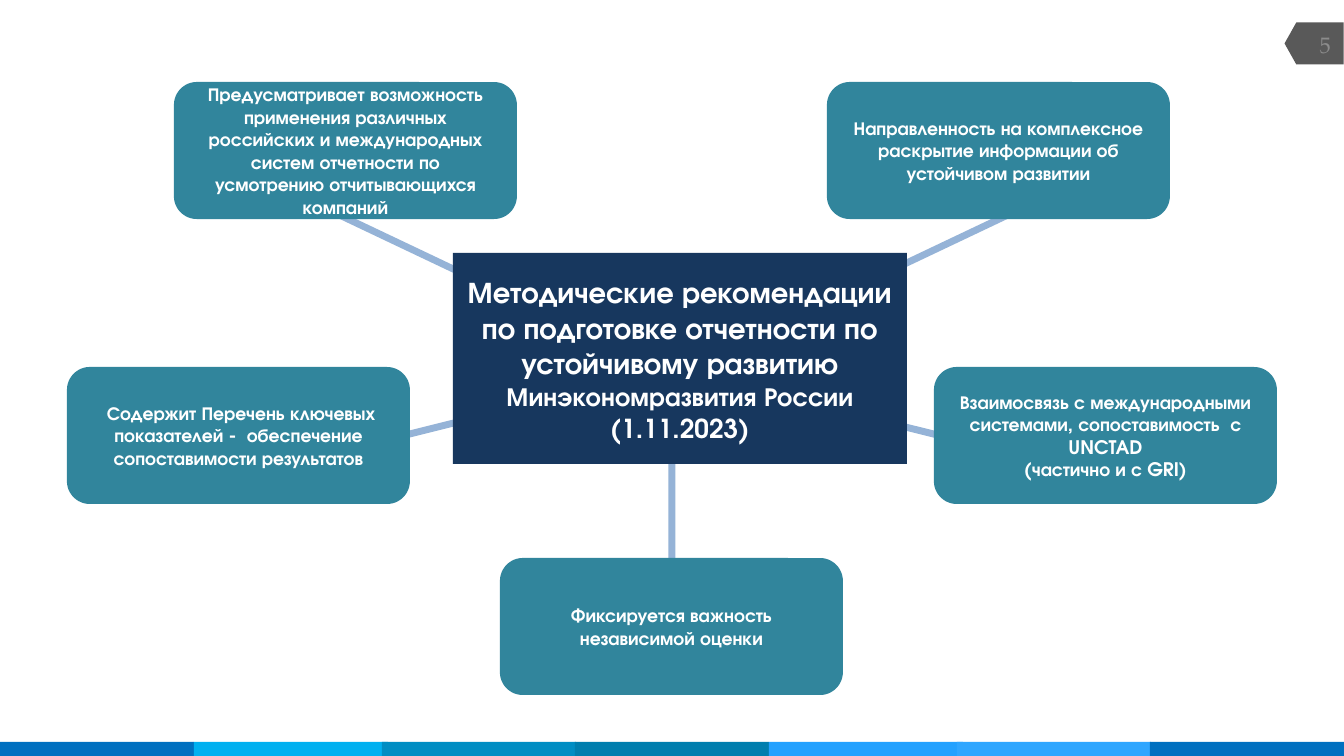
from dataclasses import dataclass

import pptx
import pptx.dml.color
import pptx.enum.shapes
import pptx.enum.text
import pptx.util

RGBColor = pptx.dml.color.RGBColor
ShapeKind = pptx.enum.shapes.MSO_SHAPE
Align = pptx.enum.text.PP_ALIGN

EMU_PER_PX = 914400 / 134.4
SLIDE_WIDTH, SLIDE_HEIGHT = 1344, 756
CARD_WIDTH, CARD_HEIGHT = 343, 137
SPOKE_LENGTH, SPOKE_THICKNESS = 286, 7
STRIPE_WIDTH, STRIPE_HEIGHT = 194, 14

TEXT_FONT = "TeX Gyre Adventor"
NUMBER_FONT = "TeX Gyre Pagella"

WHITE = RGBColor(0xFF, 0xFF, 0xFF)
NAVY = RGBColor(0x17, 0x37, 0x5E)
TEAL = RGBColor(0x31, 0x85, 0x9C)
PALE_BLUE = RGBColor(0x95, 0xB3, 0xD7)
DARK_GRAY = RGBColor(0x59, 0x59, 0x59)
NUMBER_GRAY = RGBColor(0x8C, 0x8C, 0x8C)
BLUE = RGBColor(0x00, 0x70, 0xC0)
SKY = RGBColor(0x00, 0xB0, 0xF0)
CERULEAN = RGBColor(0x00, 0x8D, 0xC3)
DEEP_CYAN = RGBColor(0x00, 0x7E, 0xAE)
AZURE = RGBColor(0x23, 0xA1, 0xFF)
LIGHT_AZURE = RGBColor(0x2F, 0xA6, 0xFF)


@dataclass(frozen=True)
class Box:
    left: int
    top: int
    width: int
    height: int


@dataclass(frozen=True)
class Stripe:
    left: int
    color: RGBColor


@dataclass(frozen=True)
class Spoke:
    center_x: int
    center_y: int
    angle: float


@dataclass(frozen=True)
class Line:
    text: str
    size: int


@dataclass(frozen=True)
class Card:
    left: int
    top: int
    paragraphs: tuple[str, ...]


STRIPES = (
    Stripe(0, BLUE),
    Stripe(194, SKY),
    Stripe(382, CERULEAN),
    Stripe(575, DEEP_CYAN),
    Stripe(769, AZURE),
    Stripe(957, LIGHT_AZURE),
    Stripe(1150, BLUE),
)

SPOKES = (
    Spoke(672, 505, 270),
    Spoke(444, 425, 346),
    Spoke(907, 427, 14),
    Spoke(929, 252, 334.6),
    Spoke(454, 269, 25.4),
)

HUB_LINES = (
    Line("Методические рекомендации по подготовке отчетности по устойчивому развитию", 16),
    Line("Минэкономразвития России (1.11.2023)", 14),
)

CARDS = (
    Card(827, 82, ("Направленность на комплексное раскрытие информации об устойчивом развитии",)),
    Card(174, 82, ("Предусматривает возможность применения различных российских и "
                   "международных систем отчетности по усмотрению отчитывающихся компаний",)),
    Card(67, 367, (" Содержит Перечень ключевых показателей -  обеспечение "
                   "сопоставимости результатов",)),
    Card(934, 367, ("Взаимосвязь с международными системами, сопоставимость  с UNCTAD",
                    "(частично и с GRI)")),
    Card(500, 558, ("Фиксируется важность независимой оценки",)),
)


def px(length: int) -> pptx.util.Emu:
    return pptx.util.Emu(round(length * EMU_PER_PX))


def place(box: Box) -> tuple[pptx.util.Emu, ...]:
    return px(box.left), px(box.top), px(box.width), px(box.height)


def add_filled(slide, kind, box: Box, color: RGBColor, angle: float = 0):
    shape = slide.shapes.add_shape(kind, *place(box))
    shape.shadow.inherit = False
    shape.fill.solid()
    shape.fill.fore_color.rgb = color
    shape.line.fill.background()
    shape.rotation = angle
    return shape


def write(shape, lines: tuple[Line, ...], font_name: str = TEXT_FONT,
          color: RGBColor = WHITE, align=Align.CENTER, bold: bool = True) -> None:
    text_frame = shape.text_frame
    text_frame.word_wrap = True
    text_frame.vertical_anchor = pptx.enum.text.MSO_ANCHOR.MIDDLE
    text_frame.text = "\n".join(line.text for line in lines)
    for paragraph, line in zip(text_frame.paragraphs, lines):
        paragraph.alignment = align
        for run in paragraph.runs:
            run.font.name = font_name
            run.font.size = pptx.util.Pt(line.size)
            run.font.bold = bold
            run.font.color.rgb = color


def add_spoke(slide, spoke: Spoke) -> None:
    box = Box(spoke.center_x - SPOKE_LENGTH // 2, spoke.center_y - SPOKE_THICKNESS // 2,
              SPOKE_LENGTH, SPOKE_THICKNESS)
    add_filled(slide, ShapeKind.RECTANGLE, box, PALE_BLUE, spoke.angle)


def add_card(slide, card: Card) -> None:
    box = Box(card.left, card.top, CARD_WIDTH, CARD_HEIGHT)
    shape = add_filled(slide, ShapeKind.ROUNDED_RECTANGLE, box, TEAL)
    write(shape, tuple(Line(text, 10) for text in card.paragraphs))


def main() -> None:
    presentation = pptx.Presentation()
    presentation.slide_width = px(SLIDE_WIDTH)
    presentation.slide_height = px(SLIDE_HEIGHT)
    slide = presentation.slides.add_slide(presentation.slide_layouts[6])

    # Bottom ribbon
    for stripe in STRIPES:
        box = Box(stripe.left, SLIDE_HEIGHT - STRIPE_HEIGHT, STRIPE_WIDTH, STRIPE_HEIGHT)
        add_filled(slide, ShapeKind.RECTANGLE, box, stripe.color)

    # Page number tag
    add_filled(slide, ShapeKind.FLOWCHART_OFFPAGE_CONNECTOR, Box(1293, 14, 42, 59),
               DARK_GRAY, 90)
    page_number = slide.shapes.add_textbox(*place(Box(1285, 24, 59, 40)))
    write(page_number, (Line("5", 12),), NUMBER_FONT, NUMBER_GRAY, Align.RIGHT, False)

    # Spokes lie beneath the hub and the cards
    for spoke in SPOKES:
        add_spoke(slide, spoke)

    # Central hub
    hub = add_filled(slide, ShapeKind.RECTANGLE, Box(453, 253, 454, 211), NAVY)
    write(hub, HUB_LINES)

    # Surrounding cards
    for card in CARDS:
        add_card(slide, card)

    presentation.save("out.pptx")


if __name__ == "__main__":
    main()
